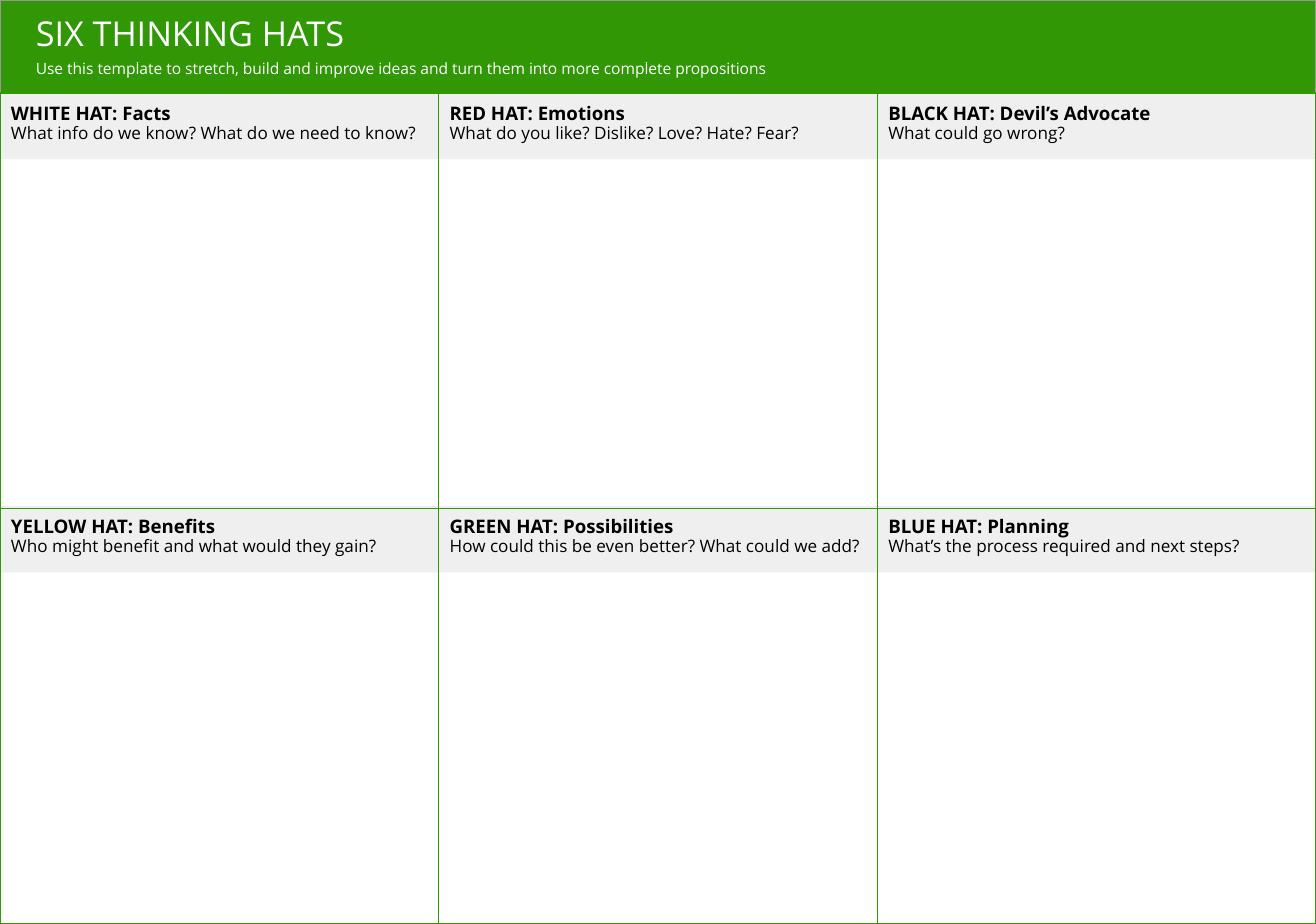
from pptx import Presentation
from pptx.dml.color import RGBColor
from pptx.enum.shapes import MSO_SHAPE
from pptx.enum.text import MSO_ANCHOR, PP_ALIGN
from pptx.util import Inches, Pt

RECT = MSO_SHAPE.RECTANGLE
TOP = MSO_ANCHOR.TOP
LEFT = PP_ALIGN.LEFT

FONT = "Open Sans"
GREEN, GREY, PALE, BLACK, WHITE = "319704", "999999", "EFEFEF", "000000", "FFFFFF"
WIDTH, HEIGHT = 11.75, 8.25
BANNER_H = 0.83
COLS, ROWS = 3, 2
CELL_W = WIDTH / COLS
CELL_H = (HEIGHT - BANNER_H) / ROWS
HEADING_H = 0.59
HEADING_PITCH = 3.69

HATS = [
    ("WHITE HAT: Facts", "What info do we know? What do we need to know?"),
    ("RED HAT: Emotions", "What do you like? Dislike? Love? Hate? Fear?"),
    ("BLACK HAT: Devil’s Advocate", "What could go wrong?"),
    ("YELLOW HAT: Benefits", "Who might benefit and what would they gain?"),
    ("GREEN HAT: Possibilities", "How could this be even better? What could we add?"),
    ("BLUE HAT: Planning", "What’s the process required and next steps?"),
]


def rgb(color):
    return RGBColor.from_string(color)


def add_rect(s, x, y, w, h, fill=None, line=None):
    sp = s.shapes.add_shape(RECT, Inches(x), Inches(y), Inches(w), Inches(h))
    sp.shadow.inherit = False
    if fill:
        sp.fill.solid()
        sp.fill.fore_color.rgb = rgb(fill)
    else:
        sp.fill.background()
    if line:
        sp.line.color.rgb = rgb(line)
        sp.line.width = Pt(0.75)
    else:
        sp.line.fill.background()
    return sp


def set_frame(sp, inset):
    tf = sp.text_frame
    tf.word_wrap = True
    tf.vertical_anchor = TOP
    tf.margin_left = tf.margin_right = Inches(inset)
    tf.margin_top = tf.margin_bottom = Inches(inset)
    return tf


def write(p, text, size, color=BLACK, bold=False, spacing=0.9):
    p.alignment = LEFT
    p.line_spacing = spacing
    r = p.add_run()
    r.text = text
    r.font.name = FONT
    r.font.size = Pt(size)
    r.font.bold = bold
    r.font.color.rgb = rgb(color)


def add_heading(s, x, y, w, title, question):
    tf = set_frame(add_rect(s, x, y, w, HEADING_H, fill=PALE), 0.1)
    write(tf.paragraphs[0], title, 12, bold=True)
    write(tf.add_paragraph(), question, 11)


def add_banner(s, x, y, w, h):
    add_rect(s, x, y, w, h, fill=GREEN, line=GREY)
    box = s.shapes.add_textbox(Inches(x + 0.21), Inches(y + 0.03), Inches(8.22), Inches(h - 0.07))
    tf = set_frame(box, 0.11)
    write(tf.paragraphs[0], "SIX THINKING HATS", 22, color=WHITE, spacing=0.93)
    write(tf.add_paragraph(),
          "Use this template to stretch, build and improve ideas "
          "and turn them into more complete propositions",
          10, color=WHITE, spacing=1.25)


def main():
    prs = Presentation()
    prs.slide_width, prs.slide_height = Inches(WIDTH), Inches(HEIGHT)
    s = prs.slides.add_slide(prs.slide_layouts[6])
    for i, (title, question) in enumerate(HATS):
        row, col = divmod(i, COLS)
        add_heading(s, col * CELL_W, BANNER_H + row * HEADING_PITCH, CELL_W, title, question)
    add_banner(s, 0, 0, WIDTH, BANNER_H)
    for i in range(len(HATS)):
        row, col = divmod(i, COLS)
        add_rect(s, col * CELL_W, BANNER_H + row * CELL_H, CELL_W, CELL_H, line=GREEN)
    prs.save("out.pptx")


if __name__ == "__main__":
    main()
